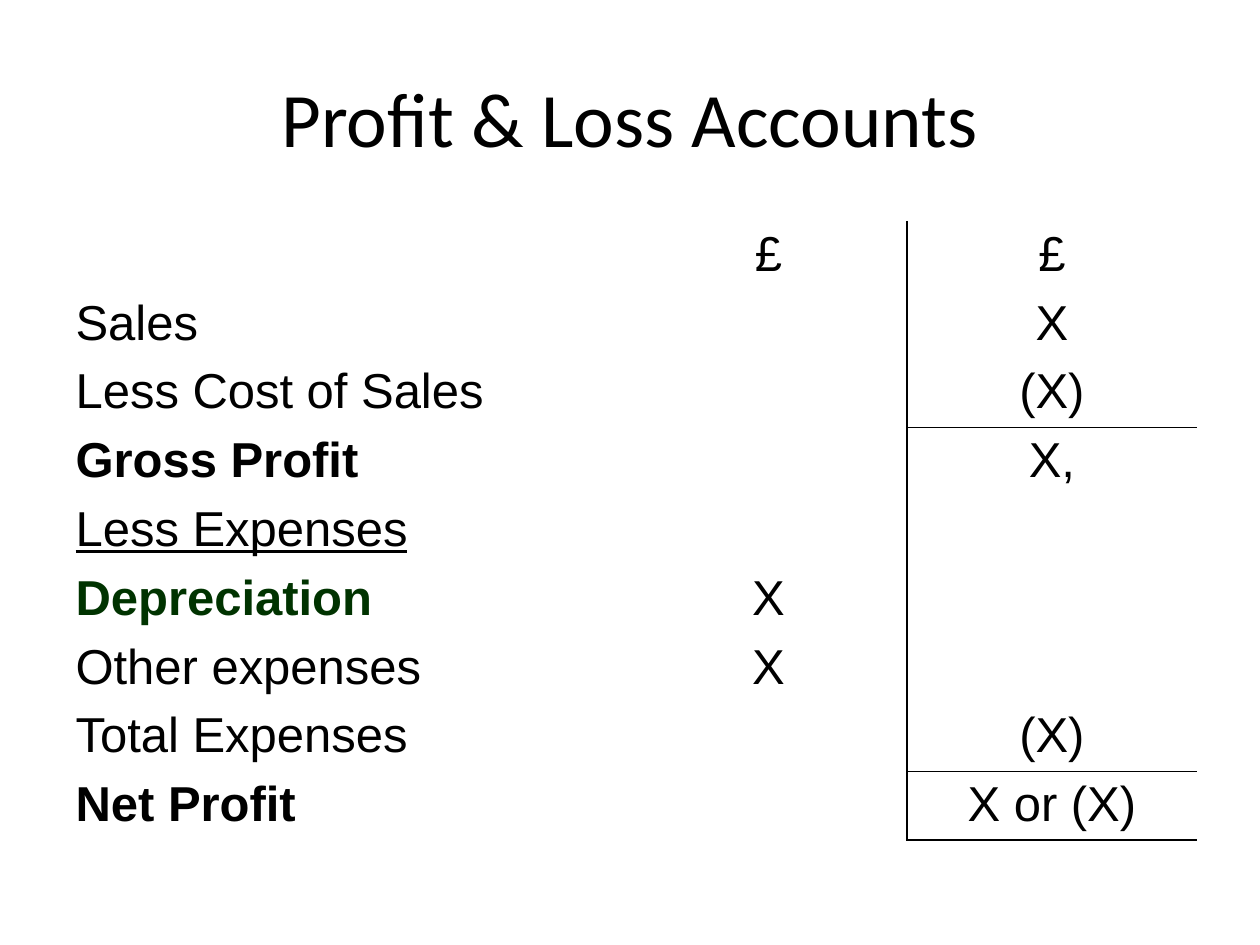
from lxml import etree
from pptx import Presentation
from pptx.dml.color import RGBColor
from pptx.enum.text import MSO_ANCHOR, PP_ALIGN
from pptx.oxml.ns import qn
from pptx.util import Pt

PX = 7257.14
BLACK = RGBColor(0, 0, 0)
GREEN = RGBColor(0, 0x33, 0)
CENTER, LEFT = PP_ALIGN.CENTER, PP_ALIGN.LEFT
MIDDLE = MSO_ANCHOR.MIDDLE

TITLE = "Profit & Loss Accounts"
ACCOUNTS = [
    ("", "£", "£"),
    ("Sales", "", "X"),
    ("Less Cost of Sales", "", "(X)"),
    ("Gross Profit", "", "X,"),
    ("Less Expenses", "", ""),
    ("Depreciation", "X", ""),
    ("Other expenses", "X", ""),
    ("Total Expenses", "", "(X)"),
    ("Net Profit", "", "X or (X)"),
]
BOLD = {"Gross Profit", "Depreciation", "Net Profit"}
UNDERLINED = {"Less Expenses"}
COLORS = {"Depreciation": GREEN}
COLUMN_WIDTHS = [567, 277, 290]
RULED_ROWS = {2, 7, 8}
TABLE_BOX = (63, 221, 1134, 605)


def px(n):
    return round(n * PX)


def set_font(p, name, size, color):
    p.font.name = name
    p.font.size = Pt(size)
    p.font.color.rgb = color


def cell_sides(row, col):
    if col == 1:
        return {"R"}
    if col == 2:
        sides = {"L"}
        if row in RULED_ROWS:
            sides.add("B")
        if row - 1 in RULED_ROWS:
            sides.add("T")
        return sides
    return set()


def set_borders(cell, sides):
    tc_pr = cell._tc.get_or_add_tcPr()
    for side in "LRTB":
        ln = etree.SubElement(tc_pr, qn(f"a:ln{side}"), w=str(Pt(1)))
        if side in sides:
            fill = etree.SubElement(ln, qn("a:solidFill"))
            etree.SubElement(fill, qn("a:srgbClr"), val=str(BLACK))
        else:
            etree.SubElement(ln, qn("a:noFill"))


def add_title(s):
    tf = s.shapes.add_textbox(*map(px, (63, 38, 1134, 157))).text_frame
    tf.word_wrap = True
    tf.vertical_anchor = MIDDLE
    p = tf.paragraphs[0]
    p.text = TITLE
    p.alignment = CENTER
    set_font(p, "Calibri", 44, BLACK)


def add_accounts(s):
    rows, cols = len(ACCOUNTS), len(COLUMN_WIDTHS)
    table = s.shapes.add_table(rows, cols, *map(px, TABLE_BOX)).table
    table.first_row = False
    table.horz_banding = False
    for column, width in zip(table.columns, COLUMN_WIDTHS):
        column.width = px(width)
    for i, values in enumerate(ACCOUNTS):
        for j, text in enumerate(values):
            cell = table.cell(i, j)
            cell.margin_top, cell.margin_bottom = px(6), px(4)
            set_borders(cell, cell_sides(i, j))
            cell.fill.background()
            p = cell.text_frame.paragraphs[0]
            p.text = text
            p.alignment = CENTER if j else LEFT
            set_font(p, "Arial", 28, COLORS.get(text, BLACK))
            p.font.bold = text in BOLD
            p.font.underline = text in UNDERLINED


def main():
    prs = Presentation()
    prs.slide_width, prs.slide_height = px(1260), px(945)
    s = prs.slides.add_slide(prs.slide_layouts[6])
    add_title(s)
    add_accounts(s)
    prs.save("out.pptx")


if __name__ == "__main__":
    main()
